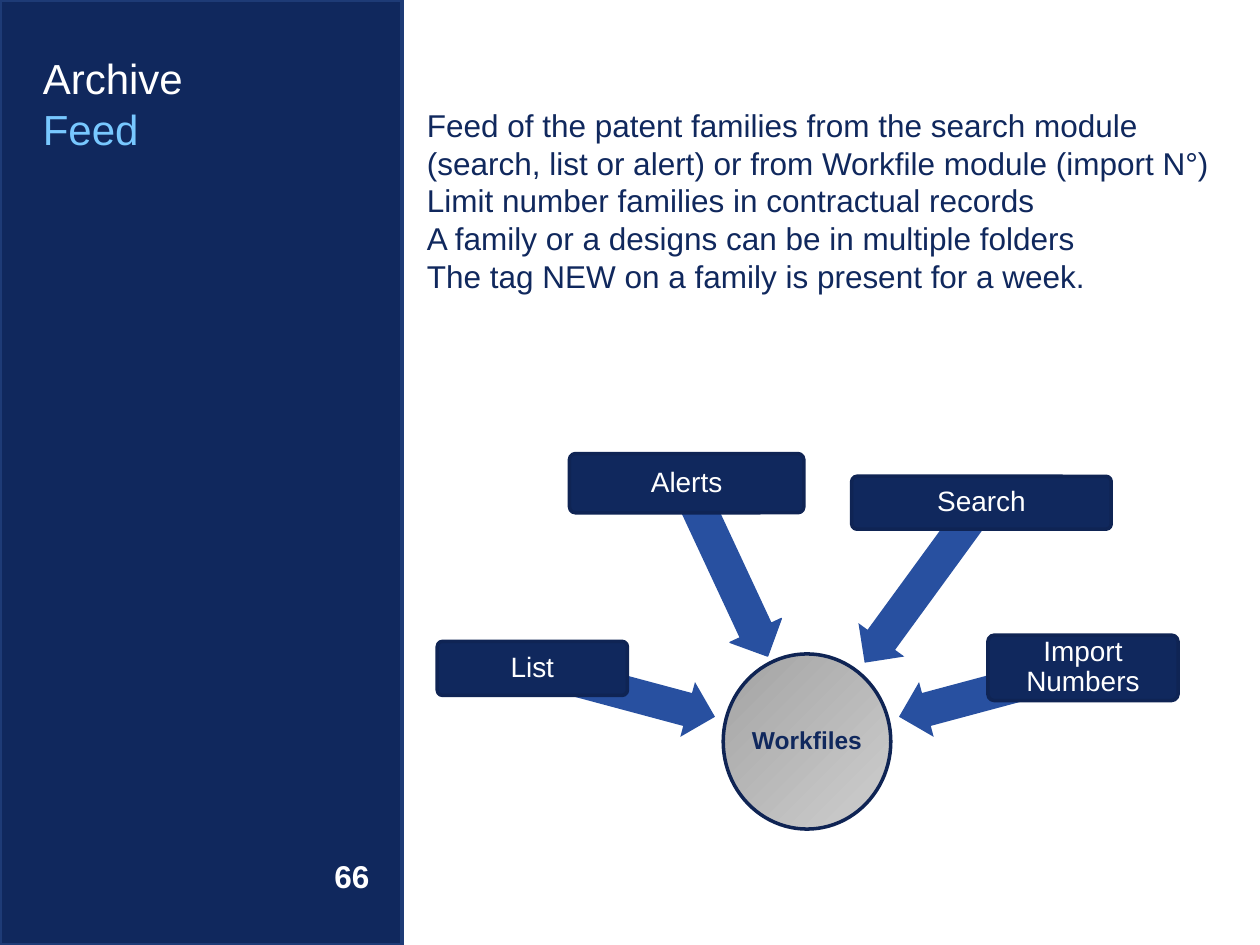
import copy

from pptx import Presentation
from pptx import util as u
from pptx.dml.color import RGBColor
from pptx.enum import shapes, text
from pptx.oxml.ns import qn

NAVY, EDGE, BLUE, WHITE = "10285D", "0F2454", "2850A0", "FFFFFF"
LEFT, CENTER, RIGHT = text.PP_ALIGN.LEFT, text.PP_ALIGN.CENTER, text.PP_ALIGN.RIGHT
TOP, MIDDLE = text.MSO_ANCHOR.TOP, text.MSO_ANCHOR.MIDDLE

BODY_LINES = [
    "Feed of the patent families from the search module (search, list or alert) "
    "or from Workfile module (import N°)",
    "Limit number families in contractual records",
    "A family or a designs can be in multiple folders",
    "The tag NEW on a family is present for a week.",
]

SOURCES = [
    ("List", (3.47, 5.09, 1.51, 0.43), (4.2, 5.27, 1.5, 0.45), 195),
    ("Alerts", (4.52, 3.6, 1.86, 0.47), (4.99, 4.28, 1.55, 0.45), 245),
    ("Search", (6.76, 3.78, 2.06, 0.42), (6.54, 4.4, 1.57, 0.45), 306.1),
    ("Import Numbers", (7.84, 5.04, 1.51, 0.52), (7.11, 5.27, 1.5, 0.45), 345),
]


def color(value):
    return RGBColor.from_string(value)


def lengths(place):
    return [u.Inches(value) for value in place]


def write(box, lines, size, align=LEFT, anchor=TOP, bold=False, spacing=None, margin=None):
    frame = box.text_frame
    frame.word_wrap = True
    frame.auto_size = text.MSO_AUTO_SIZE.NONE
    frame.vertical_anchor = anchor
    if margin is not None:
        frame.margin_left = frame.margin_right = u.Inches(margin)
        frame.margin_top = frame.margin_bottom = u.Inches(margin)
    for index, (words, shade) in enumerate(lines):
        para = frame.add_paragraph() if index else frame.paragraphs[0]
        para.alignment = align
        para.space_before = u.Pt(0)
        if spacing:
            para.line_spacing = spacing
        span = para.add_run()
        span.text = words
        span.font.name = "Arial"
        span.font.size = u.Pt(size)
        span.font.bold = bold
        span.font.color.rgb = color(shade)


def add_text(page, place, lines, size, **style):
    box = page.shapes.add_textbox(*lengths(place))
    write(box, lines, size, **style)


def add_figure(page, kind, place, fill, line=None, width=2):
    figure = page.shapes.add_shape(kind, *lengths(place))
    figure.shadow.inherit = False
    figure.fill.solid()
    figure.fill.fore_color.rgb = color(fill)
    if line:
        figure.line.color.rgb = color(line)
        figure.line.width = u.Pt(width)
    else:
        figure.line.fill.background()
    return figure


def add_title(page):
    title = page.shapes.title
    title.left, title.top, title.width, title.height = lengths((0.24, 0.37, 2.89, 5.94))
    write(title, [("Archive", WHITE), ("Feed", "78C8FF")], 24)
    panel = add_figure(page, shapes.MSO_SHAPE.RECTANGLE, (0, 0, 3.19, 7.5), NAVY, "1E3B76")
    title._element.addprevious(panel._element)


def add_hub(page):
    hub = add_figure(page, shapes.MSO_SHAPE.OVAL, (5.74, 5.19, 1.33, 1.39), "A3A3A3", EDGE)
    hub.fill.gradient()
    hub.fill.gradient_angle = 315
    stop_list = hub._element.spPr.find(qn("a:gradFill")).find(qn("a:gsLst"))
    stop_list.append(copy.deepcopy(stop_list[-1]))
    stops = [(0, "A3A3A3"), (0.83, "C7C7C7"), (1, "E4E4E4")]
    for stop, (position, shade) in zip(hub.fill.gradient_stops, stops):
        stop.position = position
        stop.color.rgb = color(shade)
    write(hub, [("Workfiles", NAVY)], 14, align=CENTER, anchor=MIDDLE,
          bold=True, spacing=0.9, margin=0.01)


def add_source(page, label, box_place, arrow_place, rotation):
    outline = BLUE if label == "Alerts" else None
    arrow = add_figure(page, shapes.MSO_SHAPE.LEFT_ARROW, arrow_place, BLUE, outline, 0.75)
    arrow.rotation = rotation
    arrow.adjustments[0] = 0.6
    arrow.adjustments[1] = 0.5
    box = add_figure(page, shapes.MSO_SHAPE.ROUNDED_RECTANGLE, box_place, NAVY, EDGE)
    box.adjustments[0] = 0.1
    write(box, [(label, WHITE)], 16, align=CENTER, anchor=MIDDLE, spacing=0.9, margin=0.04)


def main():
    deck = Presentation()
    deck.slide_width, deck.slide_height = lengths((10, 7.5))
    page = deck.slides.add_slide(deck.slide_layouts[5])
    add_title(page)
    add_text(page, (2.19, 6.75, 0.84, 0.4), [("66", WHITE)], 18,
             align=RIGHT, anchor=MIDDLE, bold=True)
    add_text(page, (3.29, 0.79, 6.6, 2.52), [(line, NAVY) for line in BODY_LINES], 18)
    add_hub(page)
    for source in SOURCES:
        add_source(page, *source)
    deck.save("out.pptx")


if __name__ == "__main__":
    main()
